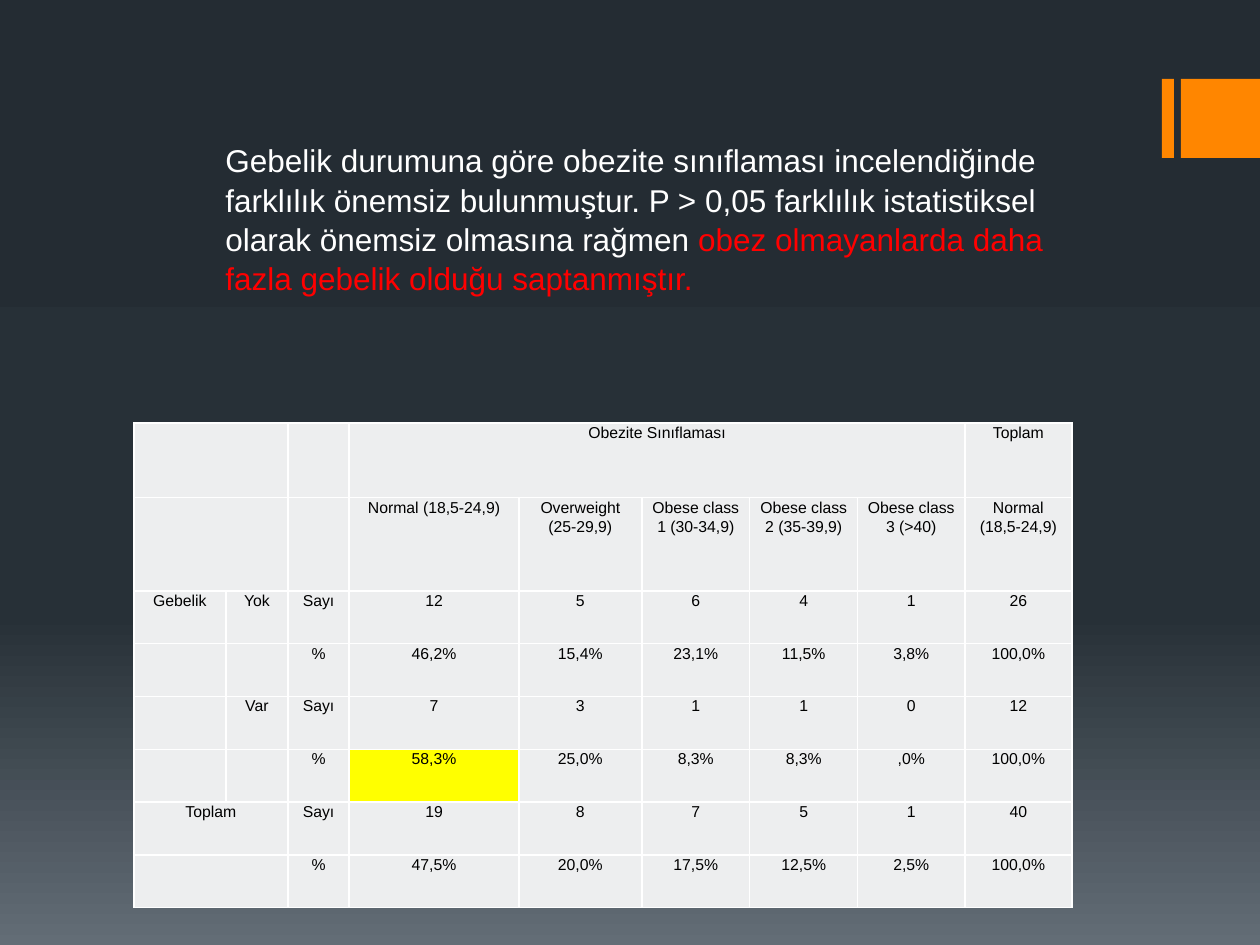
from copy import deepcopy

from pptx import Presentation
from pptx.dml.color import RGBColor
from pptx.enum.shapes import MSO_SHAPE
from pptx.enum.text import PP_ALIGN
from pptx.oxml import parse_xml
from pptx.oxml.ns import nsdecls, qn
from pptx.util import Pt

RECTANGLE = MSO_SHAPE.RECTANGLE
LEFT, CENTER = PP_ALIGN.LEFT, PP_ALIGN.CENTER
BLANK_LAYOUT = 6

COLUMN_WIDTHS = [52.6, 35.4, 35.1, 96.9, 70.3, 61.7, 61.7, 61.2, 61.2]
ROW_HEIGHTS = [42.7, 53.2] + [30.2] * 6
ROWS = [
    ["", "", "", "Obezite Sınıflaması", "", "", "", "", "Toplam"],
    ["", "", "", "Normal (18,5-24,9)", "Overweight (25-29,9)",
     "Obese class 1 (30-34,9)", "Obese class 2 (35-39,9)",
     "Obese class 3 (>40)", "Normal (18,5-24,9)"],
    ["Gebelik", "Yok", "Sayı", "12", "5", "6", "4", "1", "26"],
    ["", "", "%", "46,2%", "15,4%", "23,1%", "11,5%", "3,8%", "100,0%"],
    ["", "Var", "Sayı", "7", "3", "1", "1", "0", "12"],
    ["", "", "%", "58,3%", "25,0%", "8,3%", "8,3%", ",0%", "100,0%"],
    ["Toplam", "", "Sayı", "19", "8", "7", "5", "1", "40"],
    ["", "", "%", "47,5%", "20,0%", "17,5%", "12,5%", "2,5%", "100,0%"],
]
# (row, first column, last column)
MERGES = [(0, 3, 7)] + [(row, 0, 1) for row in (0, 1, 6, 7)]
HIGHLIGHTED = (5, 3)


def rgb(value):
    return RGBColor.from_string(value)


def write(paragraph, text, *, size, color, font="Arial", align=LEFT, spacing=1.0):
    paragraph.alignment = align
    paragraph.line_spacing = spacing
    run = paragraph.add_run()
    run.text = text
    run.font.size = Pt(size)
    run.font.name = font
    run.font.color.rgb = rgb(color)


class SlideBuilder:
    accent = "FF8600"
    white = "FFFFFF"
    red = "FF0000"
    black = "000000"
    cell_fill = "EDEEEF"
    highlight = "FFFF00"
    gradient = [(0, "242C33"), (0.65, "273037"), (1, "636D76")]

    def __init__(self, slide):
        self.slide = slide

    def background(self):
        fill = self.slide.background.fill
        fill.gradient()
        fill.gradient_angle = 270
        # The default gradient has two stops; add the middle one
        stop_list = self.slide.element.find(".//" + qn("a:gsLst"))
        stop_list.append(deepcopy(stop_list[-1]))
        for stop, (position, color) in zip(fill.gradient_stops, self.gradient):
            stop.position = position
            stop.color.rgb = rgb(color)

    def bar(self, left, top, width, height):
        bar = self.slide.shapes.add_shape(
            RECTANGLE, Pt(left), Pt(top), Pt(width), Pt(height))
        bar.shadow.inherit = False
        bar.fill.solid()
        bar.fill.fore_color.rgb = rgb(self.accent)
        bar.line.fill.background()

    def statement(self, left, top, width, height, parts):
        box = self.slide.shapes.add_textbox(
            Pt(left), Pt(top), Pt(width), Pt(height))
        box.text_frame.word_wrap = True
        for text, color in parts:
            write(box.text_frame.paragraphs[0], text, size=18, color=color,
                  spacing=1.04)

    def borders(self, cell):
        properties = cell._tc.get_or_add_tcPr()
        for side in ("lnL", "lnR", "lnT", "lnB"):
            properties.append(parse_xml(
                f'<a:{side} {nsdecls("a")} w="{Pt(1)}"><a:solidFill>'
                f'<a:srgbClr val="{self.white}"/></a:solidFill></a:{side}>'))

    def cell(self, cell, text, fill):
        cell.margin_left = cell.margin_right = Pt(5)
        cell.margin_top = cell.margin_bottom = 0
        self.borders(cell)
        cell.fill.solid()
        cell.fill.fore_color.rgb = rgb(fill)
        if text:
            write(cell.text_frame.paragraphs[0], text, size=9,
                  color=self.black, align=CENTER, spacing=1.07)

    def table(self, left, top):
        table = self.slide.shapes.add_table(
            len(ROWS), len(COLUMN_WIDTHS), Pt(left), Pt(top),
            Pt(sum(COLUMN_WIDTHS)), Pt(sum(ROW_HEIGHTS))).table
        table.first_row = table.horz_banding = False
        for column, width in zip(table.columns, COLUMN_WIDTHS):
            column.width = Pt(width)
        for row, height in zip(table.rows, ROW_HEIGHTS):
            row.height = Pt(height)
        for row, first, last in MERGES:
            table.cell(row, first).merge(table.cell(row, last))
        for r, texts in enumerate(ROWS):
            for c, text in enumerate(texts):
                fill = self.highlight if (r, c) == HIGHLIGHTED else self.cell_fill
                self.cell(table.cell(r, c), text, fill)


def main():
    presentation = Presentation()
    presentation.slide_width, presentation.slide_height = Pt(720), Pt(540)
    builder = SlideBuilder(presentation.slides.add_slide(
        presentation.slide_layouts[BLANK_LAYOUT]))
    builder.background()

    # Accent bars at the right edge
    builder.bar(664, 45, 6.8, 45.2)
    builder.bar(674.8, 45, 45.2, 45.2)

    # Pregnancy status by obesity class
    builder.table(76.5, 241.7)

    # Finding
    builder.statement(121.7, 76.3, 493.2, 94.3, [
        ("Gebelik durumuna göre obezite sınıflaması incelendiğinde farklılık "
         "önemsiz bulunmuştur. P > 0,05 farklılık istatistiksel olarak önemsiz "
         "olmasına rağmen ", builder.white),
        ("obez olmayanlarda daha fazla gebelik olduğu saptanmıştır.", builder.red),
    ])
    presentation.save("out.pptx")


if __name__ == "__main__":
    main()
